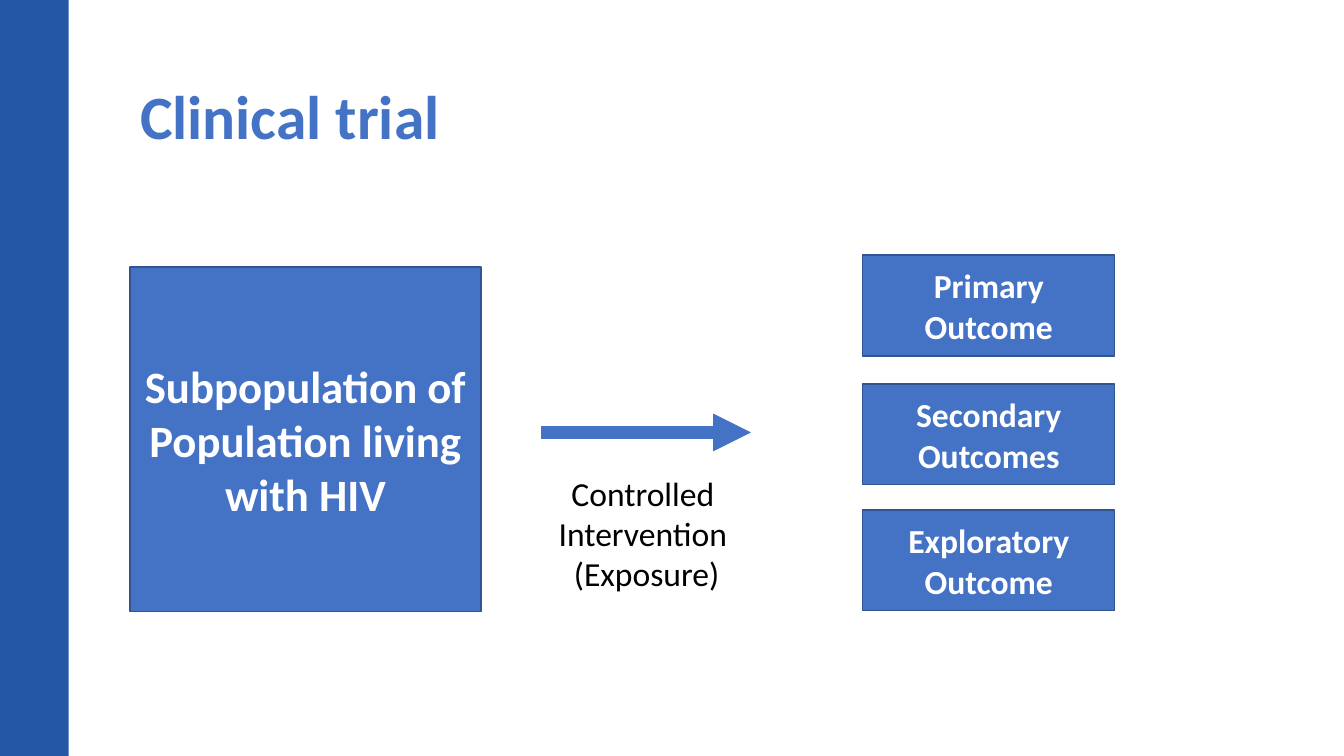
import pptx
import pptx.util
import pptx.dml.color
import pptx.enum.shapes
import pptx.enum.text
import pptx.oxml
import lxml.etree

Pt = pptx.util.Pt
RGBColor = pptx.dml.color.RGBColor
SHAPE = pptx.enum.shapes.MSO_SHAPE
ANCHOR = pptx.enum.text.MSO_ANCHOR
ALIGN = pptx.enum.text.PP_ALIGN

BAND = RGBColor(0x24, 0x58, 0xA5)
BLUE = RGBColor(0x44, 0x72, 0xC4)
EDGE = RGBColor(0x32, 0x54, 0x91)
WHITE = RGBColor(0xFF, 0xFF, 0xFF)
BLACK = RGBColor(0, 0, 0)
FONT = "Calibri"

WIDTH, HEIGHT = 960, 540
TITLE = "Clinical trial"
POPULATION = "Subpopulation of Population living with HIV"
INTERVENTION = ["Controlled ", "Intervention ", "(Exposure)"]
OUTCOMES = [
    ("Primary Outcome", 182.2),
    ("Secondary Outcomes", 274.3),
    ("Exploratory Outcome", 364.3),
]
OUTCOME_LEFT, OUTCOME_WIDTH, OUTCOME_HEIGHT = 616.3, 180, 72
ARROW_LEFT, ARROW_RIGHT, ARROW_Y = 386.6, 536.4, 308.9


def points(*values):
    return [Pt(v) for v in values]


def add_run(p, text, size, color, bold):
    r = p.add_run()
    r.text = text
    r.font.name = FONT
    r.font.size = Pt(size)
    r.font.bold = bold
    r.font.color.rgb = color


def add_rect(s, box, fill):
    sp = s.shapes.add_shape(SHAPE.RECTANGLE, *points(*box))
    sp.shadow.inherit = False
    sp.fill.solid()
    sp.fill.fore_color.rgb = fill
    sp.line.fill.background()
    return sp


def add_box(s, box, text, size):
    sp = add_rect(s, box, BLUE)
    sp.line.color.rgb = EDGE
    sp.line.width = Pt(1)
    tf = sp.text_frame
    tf.word_wrap = True
    tf.vertical_anchor = ANCHOR.MIDDLE
    p = tf.paragraphs[0]
    p.alignment = ALIGN.CENTER
    add_run(p, text, size, WHITE, True)


def add_arrow(s):
    c = s.shapes.add_connector(
        pptx.enum.shapes.MSO_CONNECTOR.STRAIGHT,
        *points(ARROW_LEFT, ARROW_Y, ARROW_RIGHT, ARROW_Y))
    c.line.color.rgb = BLUE
    c.line.width = Pt(9)
    qn = pptx.oxml.ns.qn
    ln = c.line._get_or_add_ln()
    lxml.etree.SubElement(ln, qn("a:tailEnd"), type="triangle")
    lxml.etree.SubElement(c._element.spPr, qn("a:effectLst"))


def add_title(s):
    title = s.shapes.title
    title.left, title.top, title.width, title.height = points(92.9, 29.5, 828, 104.4)
    tf = title.text_frame
    tf.word_wrap = True
    tf.vertical_anchor = ANCHOR.MIDDLE
    p = tf.paragraphs[0]
    p.alignment = ALIGN.LEFT
    add_run(p, TITLE, 44, BLUE, True)


def add_intervention(s):
    tf = s.shapes.add_textbox(*points(391, 334.1, 141.8, 94.3)).text_frame
    tf.word_wrap = False
    tf.auto_size = pptx.enum.text.MSO_AUTO_SIZE.SHAPE_TO_FIT_TEXT
    for i, line in enumerate(INTERVENTION):
        p = tf.add_paragraph() if i else tf.paragraphs[0]
        p.alignment = ALIGN.CENTER
        add_run(p, line, 24, BLACK, False)


def main():
    prs = pptx.Presentation()
    prs.slide_width, prs.slide_height = points(WIDTH, HEIGHT)
    s = prs.slides.add_slide(prs.slide_layouts[5])
    add_rect(s, (0, 0, 49, HEIGHT), BAND)
    add_title(s)
    add_box(s, (92.9, 190.8, 250.6, 246.2), POPULATION, 32)
    add_arrow(s)
    add_intervention(s)
    for text, top in OUTCOMES:
        add_box(s, (OUTCOME_LEFT, top, OUTCOME_WIDTH, OUTCOME_HEIGHT), text, 24)
    prs.save("out.pptx")


if __name__ == "__main__":
    main()
